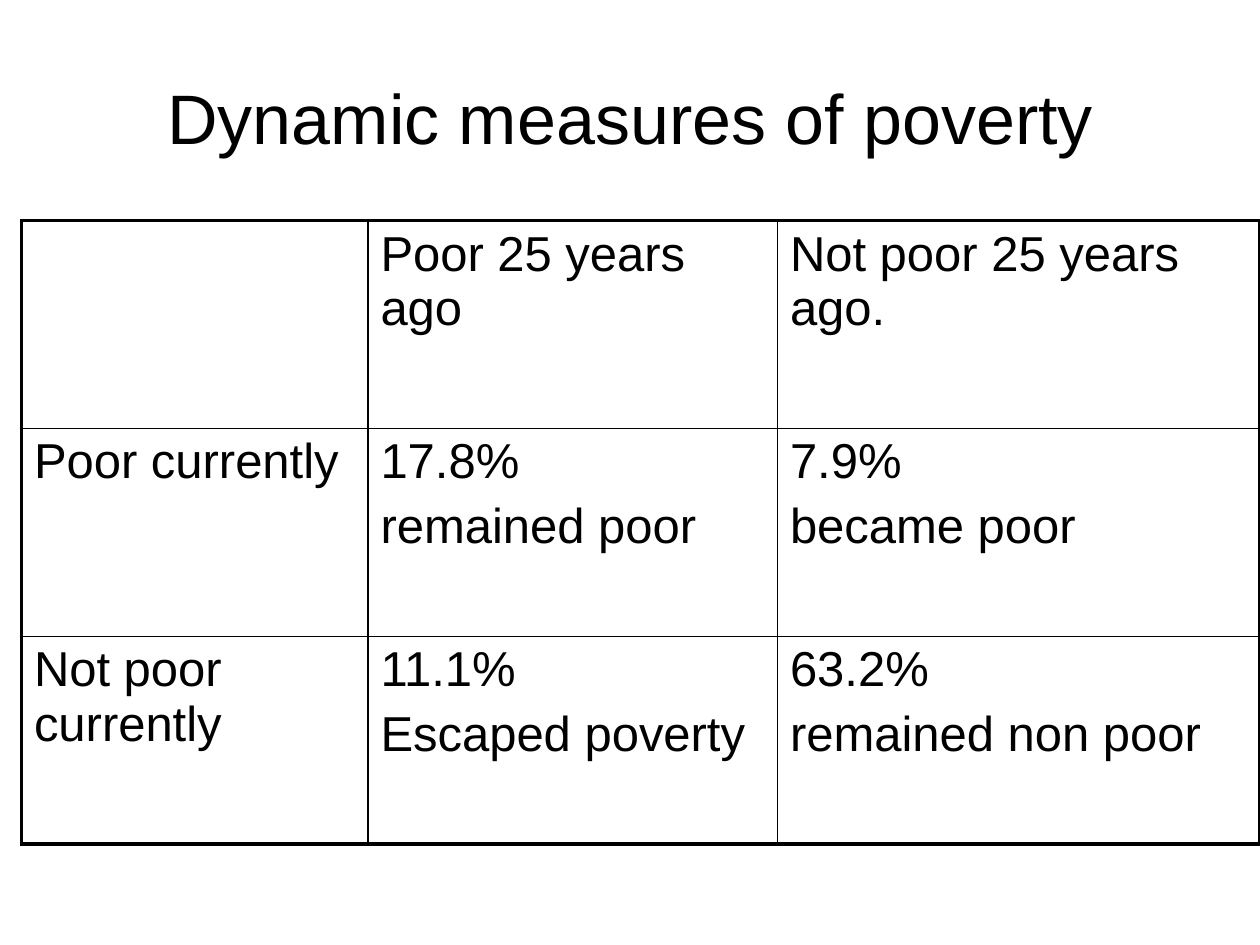
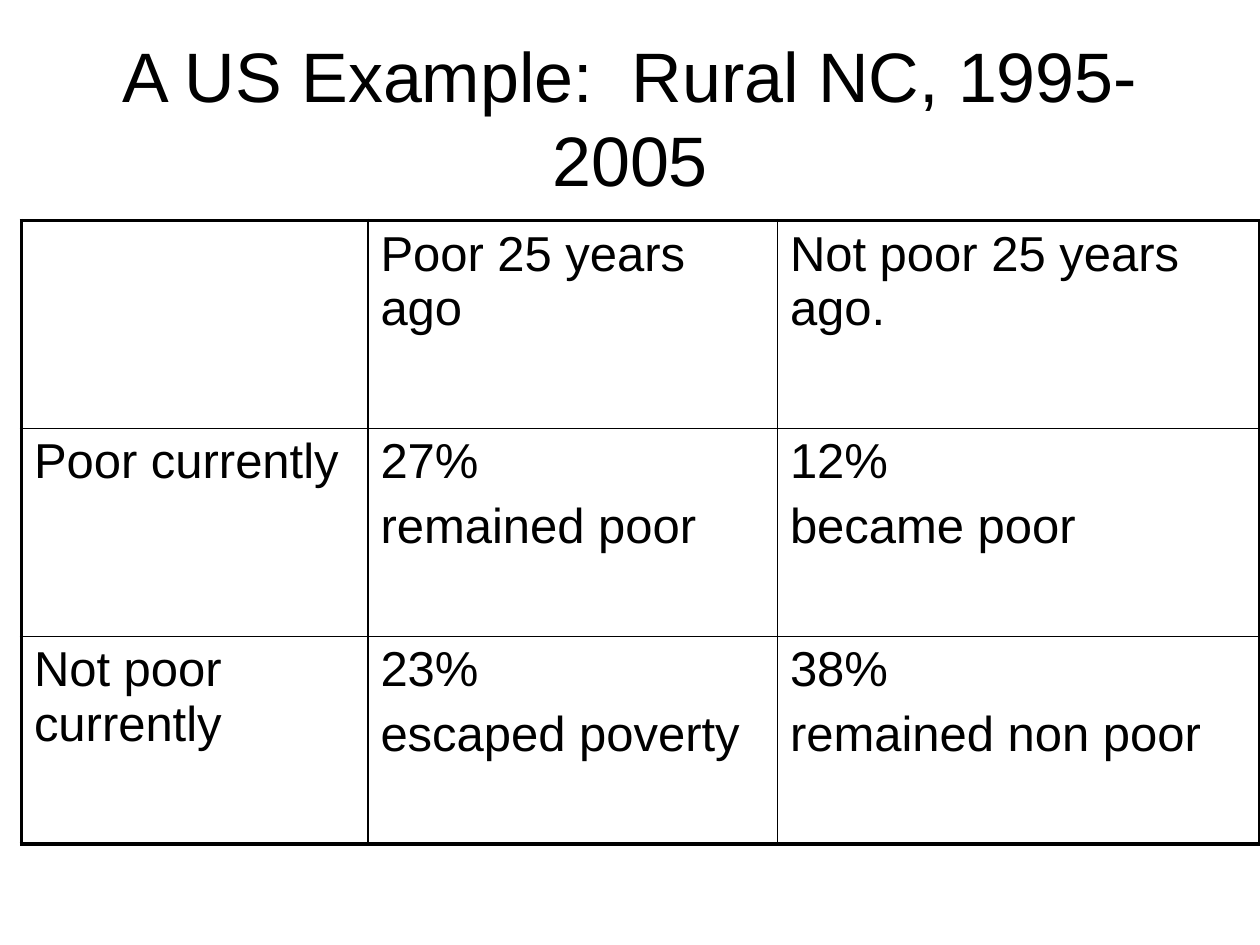
from lxml import etree
from pptx import Presentation
from pptx import util as u
from pptx.dml.color import RGBColor
from pptx.enum import text
from pptx.oxml.ns import qn

# Content: each table cell is a list of paragraphs
HEADER = [[], ["Poor 25 years ago"], ["Not poor 25 years ago."]]
SLIDES = [
    ("Dynamic measures of poverty", [
        HEADER,
        [["Poor currently"], ["17.8%", "remained poor"], ["7.9%", "became poor"]],
        [["Not poor currently"], ["11.1%", "Escaped poverty"], ["63.2%", "remained non poor"]],
    ]),
    ("A US Example:  Rural NC, 1995-2005", [
        HEADER,
        [["Poor currently"], ["27%", "remained poor"], ["12%", "became poor"]],
        [["Not poor currently"], ["23%", "escaped poverty"], ["38%", "remained non poor"]],
    ]),
]

# Shared style
COLORS = {"ink": "000000", "paper": "FFFFFF"}
FONT = "Arial"
TITLE_SIZE, CELL_SIZE = 40, 28
TITLE_BOX = (0.5, 0.3, 9, 1.25)
TABLE_LEFT, TABLE_TOP = 0.17, 1.75
COLUMN_WIDTHS = (2.75, 3.25, 3.83)
ROW_HEIGHT = 1.65
OUTER_LINE, INNER_LINE = 2.25, 1


def style_font(font, size):
    font.name = FONT
    font.size = u.Pt(size)
    font.color.rgb = RGBColor.from_string(COLORS["ink"])


def add_title(page, title):
    box = page.shapes.title
    box.left, box.top, box.width, box.height = map(u.Inches, TITLE_BOX)
    frame = box.text_frame
    frame.word_wrap = True
    frame.auto_size = text.MSO_AUTO_SIZE.NONE
    frame.vertical_anchor = text.MSO_ANCHOR.MIDDLE
    para = frame.paragraphs[0]
    para.alignment = text.PP_ALIGN.CENTER
    span = para.add_run()
    span.text = title
    style_font(span.font, TITLE_SIZE)


def set_borders(cell, outer_edges):
    """Draw the four cell edges, heavier where the edge bounds the table."""
    properties = cell._tc.get_or_add_tcPr()
    for edge in "LRTB":
        width = OUTER_LINE if edge in outer_edges else INNER_LINE
        line = etree.SubElement(properties, qn(f"a:ln{edge}"), w=str(u.Pt(width)))
        fill = etree.SubElement(line, qn("a:solidFill"))
        etree.SubElement(fill, qn("a:srgbClr"), val=COLORS["ink"])


def fill_cell(cell, lines):
    frame = cell.text_frame
    style_font(frame.paragraphs[0].font, CELL_SIZE)
    for number, line in enumerate(lines):
        para = frame.add_paragraph() if number else frame.paragraphs[0]
        if number:
            para.space_before = u.Pt(0.2 * CELL_SIZE)
        span = para.add_run()
        span.text = line
        style_font(span.font, CELL_SIZE)


def add_poverty_table(page, rows):
    frame = page.shapes.add_table(
        len(rows), len(COLUMN_WIDTHS), u.Inches(TABLE_LEFT), u.Inches(TABLE_TOP),
        u.Inches(sum(COLUMN_WIDTHS)), u.Inches(ROW_HEIGHT * len(rows)))
    table = frame.table
    table.first_row = table.horz_banding = False
    for column, width in zip(table.columns, COLUMN_WIDTHS):
        column.width = u.Inches(width)
    last_row, last_column = len(rows) - 1, len(COLUMN_WIDTHS) - 1
    for r, row in enumerate(rows):
        table.rows[r].height = u.Inches(ROW_HEIGHT)
        for c, lines in enumerate(row):
            cell = table.cell(r, c)
            outer = {"T": r == 0, "B": r == last_row, "L": c == 0, "R": c == last_column}
            set_borders(cell, [edge for edge, is_outer in outer.items() if is_outer])
            cell.fill.background()
            fill_cell(cell, lines)


def main():
    deck = Presentation()
    deck.slide_width, deck.slide_height = u.Inches(10), u.Inches(7.5)
    title_only = deck.slide_layouts[5]
    for title, rows in SLIDES:
        page = deck.slides.add_slide(title_only)
        page.background.fill.solid()
        page.background.fill.fore_color.rgb = RGBColor.from_string(COLORS["paper"])
        add_title(page, title)
        add_poverty_table(page, rows)
    deck.save("out.pptx")


if __name__ == "__main__":
    main()
